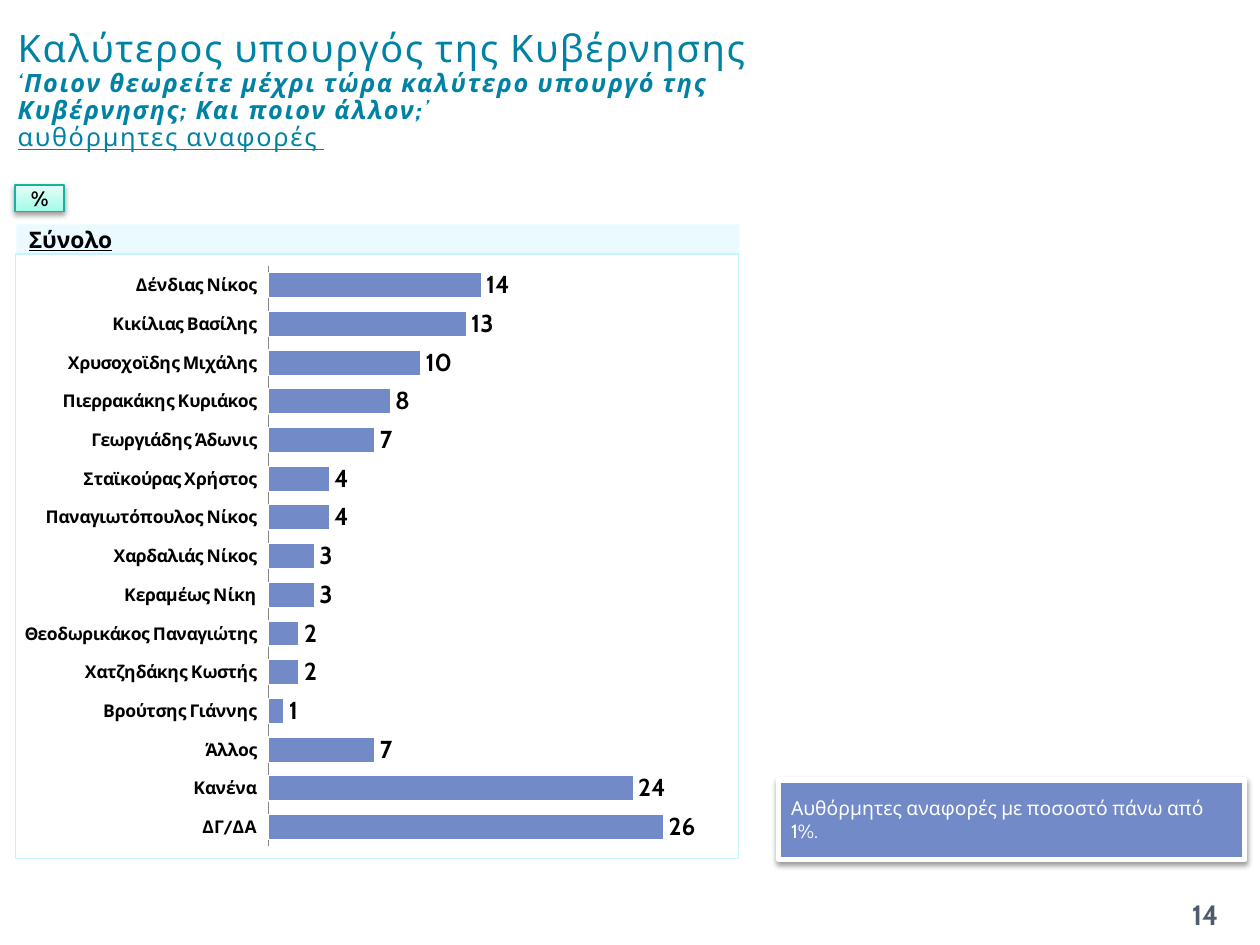
from copy import deepcopy

from lxml.etree import SubElement
from pptx import Presentation
from pptx.chart.data import CategoryChartData
from pptx.dml.color import RGBColor
from pptx.enum.chart import XL_CHART_TYPE as ChartType, XL_LABEL_POSITION as LabelPosition
from pptx.enum.chart import XL_TICK_LABEL_POSITION as TickLabels, XL_TICK_MARK as TickMark
from pptx.enum.shapes import MSO_SHAPE as Shape
from pptx.enum.text import MSO_ANCHOR as Anchor, PP_ALIGN as Align
from pptx.oxml import parse_xml
from pptx.oxml.ns import nsdecls, qn
from pptx.util import Pt

FONT = "Cabin"
BLACK = RGBColor(0x00, 0x00, 0x00)
WHITE = RGBColor(0xFF, 0xFF, 0xFF)
TEAL = RGBColor(0x00, 0x82, 0xA5)
SLATE = RGBColor(0x4E, 0x5B, 0x6F)
BLUE = RGBColor(0x73, 0x8A, 0xC8)
PALE_CYAN = RGBColor(0xC5, 0xF3, 0xFF)
AXIS_GREY = RGBColor(0x86, 0x86, 0x86)
MINT_LINE = RGBColor(0x16, 0xB3, 0x9E)
MINT_STOPS = [(0, RGBColor(0x9D, 0xFD, 0xE8)),
              (0.35, RGBColor(0xBB, 0xFC, 0xED)),
              (1, RGBColor(0xE4, 0xFF, 0xF9))]

# Content: title lines as runs of (text, size, bold, italic, underline)
TITLE = [
    [("Καλύτερος υπουργός της Κυβέρνησης", 21.6, False, False, False)],
    [("‘", 14.4, False, True, False),
     ("Ποιον θεωρείτε μέχρι τώρα καλύτερο υπουργό της Κυβέρνησης; Και ποιον άλλον;",
      14.4, True, True, False),
     ("’", 14.4, False, True, False)],
    [("αυθόρμητες αναφορές ", 14.4, False, False, True)],
]
MINISTERS = [
    ("Δένδιας Νίκος", 14), ("Κικίλιας Βασίλης", 13), ("Χρυσοχοϊδης Μιχάλης", 10),
    ("Πιερρακάκης Κυριάκος", 8), ("Γεωργιάδης Άδωνις", 7), ("Σταϊκούρας Χρήστος", 4),
    ("Παναγιωτόπουλος Νίκος", 4), ("Χαρδαλιάς Νίκος", 3), ("Κεραμέως Νίκη", 3),
    ("Θεοδωρικάκος Παναγιώτης", 2), ("Χατζηδάκης Κωστής", 2), ("Βρούτσης Γιάννης", 1),
    ("Άλλος", 7), ("Κανένα", 24), ("ΔΓ/ΔΑ", 26),
]
PLOT_AREA = {"x": 0.35, "y": 0.02, "w": 0.63, "h": 0.96}

# Boxes: left, top, width, height
TITLE_BOX = (3, 9.4, 493, 85)
PERCENT_BOX = (8.6, 105.8, 28.1, 15.1)
HEADER_BOX = (9.4, 128.2, 413.3, 17.3)
CHART_BOX = (8.6, 144.7, 414, 346.3)
NOTE_BOX = (445, 445.7, 266.4, 45.4)
NUMBER_BOX = (660.2, 508.3, 56.9, 28.8)


def points(box):
    return [Pt(length) for length in box]


def style(font, size, color, bold=False):
    font.name, font.size, font.bold = FONT, Pt(size), bold
    font.color.rgb = color


def write(shape, text, size, color, bold=False, align=Align.LEFT):
    frame = shape.text_frame
    frame.text = text
    frame.word_wrap = True
    frame.vertical_anchor = Anchor.MIDDLE
    frame.margin_top = frame.margin_bottom = 0
    paragraph = frame.paragraphs[0]
    paragraph.alignment = align
    for span in paragraph.runs:
        style(span.font, size, color, bold)
    return paragraph


def add_rectangle(page, box):
    shape = page.shapes.add_shape(Shape.RECTANGLE, *points(box))
    shape.shadow.inherit = False
    return shape


def outline(line, color, width):
    line.color.rgb = color
    line.width = Pt(width)


def add_shadow(shape):
    effects = shape._element.spPr.find(qn("a:effectLst"))
    effects.append(parse_xml(
        f'<a:outerShdw {nsdecls("a")} blurRad="{Pt(3.1)}" dist="{Pt(1.6)}" dir="5400000" '
        'rotWithShape="0"><a:srgbClr val="000000"><a:alpha val="38000"/></a:srgbClr>'
        '</a:outerShdw>'))


def add_title(page):
    box = page.shapes.add_textbox(*points(TITLE_BOX))
    paragraph = write(box, "", 14.4, TEAL)
    paragraph.line_spacing = 0.9
    for index, line in enumerate(TITLE):
        if index:
            paragraph.add_line_break()
        for text, size, bold, italic, underline in line:
            span = paragraph.add_run()
            span.text = text
            style(span.font, size, TEAL, bold)
            span.font.italic, span.font.underline = italic, underline
            span.font._element.set("spc", "100")


def add_chart(page):
    data = CategoryChartData(number_format="0")
    data.categories = [name for name, _ in MINISTERS]
    data.add_series("Series 1", [value for _, value in MINISTERS])
    chart = page.shapes.add_chart(ChartType.BAR_CLUSTERED, *points(CHART_BOX), data).chart
    chart.has_legend = chart.has_title = False
    style(chart.font, 18, BLACK)

    names = chart.category_axis
    names.reverse_order = True
    names.major_tick_mark = TickMark.NONE
    names.tick_label_position = TickLabels.LOW
    style(names.tick_labels.font, 10, BLACK, True)
    outline(names.format.line, AXIS_GREY, 0.75)
    values = chart.value_axis
    values.minimum_scale, values.maximum_scale = 0, 30
    values.has_major_gridlines = values.visible = False

    plot = chart.plots[0]
    plot.gap_width, plot.overlap, plot.vary_by_categories = 54, -25, False
    bars = plot.series[0].format
    bars.fill.solid()
    bars.fill.fore_color.rgb = BLUE
    outline(bars.line, WHITE, 0.75)
    plot.has_data_labels = True
    labels = plot.data_labels
    labels.show_value = True
    labels.number_format, labels.number_format_is_linked = "0", False
    labels.position = LabelPosition.OUTSIDE_END
    style(labels.font, 14, BLACK, True)

    # Fixed plot area and chart border
    space = chart._chartSpace
    area = space.chart.plotArea
    for old in area.findall(qn("c:layout")):
        area.remove(old)
    settings = {"layoutTarget": "inner", "xMode": "edge", "yMode": "edge", **PLOT_AREA}
    layout = parse_xml(f'<c:layout {nsdecls("c")}><c:manualLayout/></c:layout>')
    for name, value in settings.items():
        SubElement(layout[0], qn(f"c:{name}")).set("val", str(value))
    area.insert(0, layout)
    space.chart.addnext(parse_xml(
        f'<c:spPr {nsdecls("c", "a")}><a:noFill/><a:ln w="{Pt(0.75)}"><a:solidFill>'
        f'<a:srgbClr val="{PALE_CYAN}"/></a:solidFill></a:ln></c:spPr>'))


def add_header(page):
    header = add_rectangle(page, HEADER_BOX)
    header.fill.solid()
    header.fill.fore_color.rgb = PALE_CYAN
    color = header._element.spPr.find(qn("a:solidFill"))[0]
    SubElement(color, qn("a:alpha")).set("val", "35000")
    header.line.fill.background()
    # The underline runs on to a tab stop
    paragraph = write(header, "Σύνολο\t", 13, BLACK, True)
    paragraph.runs[0].font.underline = True
    tabs = SubElement(paragraph._p.get_or_add_pPr(), qn("a:tabLst"))
    stop = SubElement(tabs, qn("a:tab"))
    stop.set("pos", str(Pt(78)))
    stop.set("algn", "l")


def add_percent_tag(page):
    tag = add_rectangle(page, PERCENT_BOX)
    tag.fill.gradient()
    tag.fill.gradient_angle = 90
    stop_list = tag._element.spPr.find(qn("a:gradFill")).find(qn("a:gsLst"))
    stop_list.append(deepcopy(stop_list[0]))
    for stop, (position, color) in zip(tag.fill.gradient_stops, MINT_STOPS):
        stop.position, stop.color.rgb = position, color
    outline(tag.line, MINT_LINE, 0.75)
    add_shadow(tag)
    write(tag, "%", 12, BLACK, True, Align.CENTER)


def add_note(page):
    note = add_rectangle(page, NOTE_BOX)
    note.fill.solid()
    note.fill.fore_color.rgb = BLUE
    outline(note.line, WHITE, 3)
    add_shadow(note)
    write(note, "Αυθόρμητες αναφορές με ποσοστό πάνω από 1%.", 11, WHITE)


def main():
    deck = Presentation()
    deck.slide_width, deck.slide_height = Pt(720), Pt(540)
    page = deck.slides.add_slide(deck.slide_layouts[6])
    add_title(page)
    add_chart(page)
    number = page.shapes.add_textbox(*points(NUMBER_BOX))
    write(number, "14", 16, SLATE, True, Align.CENTER)
    add_header(page)
    add_percent_tag(page)
    add_note(page)
    deck.save("out.pptx")


if __name__ == "__main__":
    main()
